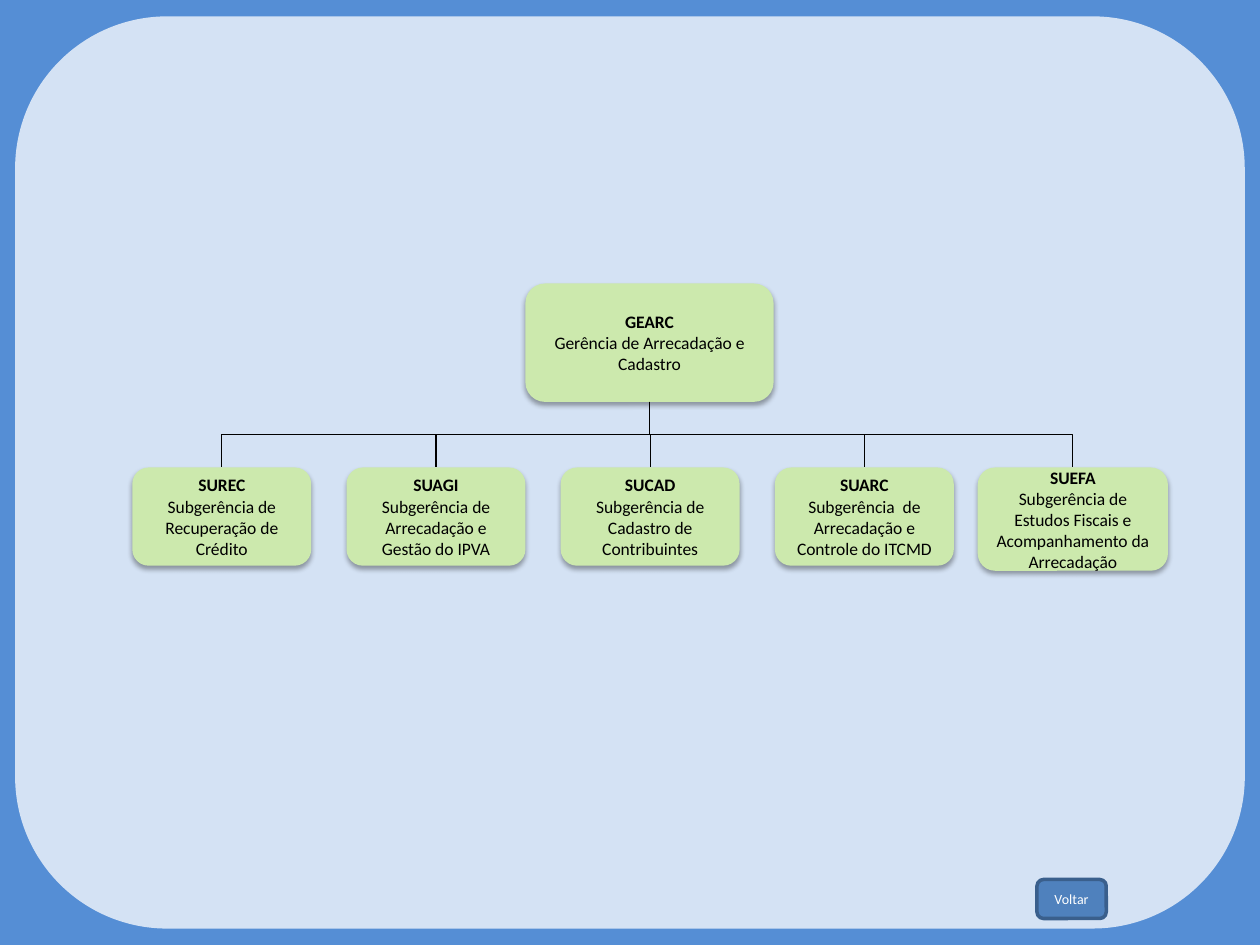
from dataclasses import dataclass

from lxml import etree
from pptx import Presentation
from pptx.dml.color import RGBColor
from pptx.enum.shapes import MSO_CONNECTOR, MSO_SHAPE
from pptx.enum.text import PP_ALIGN
from pptx.oxml.ns import qn
from pptx.shapes.autoshape import Shape
from pptx.slide import Slide
from pptx.util import Inches, Pt

ROUNDED = MSO_SHAPE.ROUNDED_RECTANGLE
ELBOW = MSO_CONNECTOR.ELBOW
CENTER = PP_ALIGN.CENTER

FRAME_BLUE = RGBColor(0x55, 0x8E, 0xD5)
PANEL_BLUE = RGBColor(0xD4, 0xE2, 0xF4)
UNIT_GREEN = RGBColor(0xCC, 0xE9, 0xAD)
BUTTON_BLUE = RGBColor(0x4F, 0x81, 0xBD)
BUTTON_EDGE = RGBColor(0x3A, 0x5F, 0x8C)
BLACK = RGBColor(0, 0, 0)
WHITE = RGBColor(0xFF, 0xFF, 0xFF)

FONT = "Calibri"
BOTTOM_SITE, TOP_SITE = 2, 0
FIRST_LEFT, PITCH, ROW_TOP = 1.05, 1.7, 3.71


@dataclass(frozen=True)
class Unit:
    acronym: str
    description: str
    left: float
    top: float = ROW_TOP
    width: float = 1.42
    height: float = 0.78


MANAGEMENT = Unit("GEARC", "Gerência de Arrecadação e Cadastro", 4.17, 2.25, 1.97, 0.94)
REGULAR_TEAMS = [
    ("SUREC", "Subgerência de Recuperação de Crédito"),
    ("SUAGI", "Subgerência de Arrecadação e Gestão do IPVA"),
    ("SUCAD", "Subgerência de Cadastro de Contribuintes"),
    ("SUARC", "Subgerência  de Arrecadação e Controle do ITCMD"),
]
TEAMS = [
    Unit(acronym, description, FIRST_LEFT + i * PITCH)
    for i, (acronym, description) in enumerate(REGULAR_TEAMS)
] + [
    Unit("SUEFA", "Subgerência de Estudos Fiscais e Acompanhamento da Arrecadação",
         7.76, width=1.51, height=0.82),
]


def add_rounded_box(slide: Slide, left: float, top: float, width: float,
                    height: float, fill: RGBColor) -> Shape:
    box = slide.shapes.add_shape(
        ROUNDED, Inches(left), Inches(top), Inches(width), Inches(height))
    box.fill.solid()
    box.fill.fore_color.rgb = fill
    box.line.fill.background()
    box.shadow.inherit = False
    return box


def write_lines(box: Shape, lines: list[tuple[str, bool]], size: float,
                color: RGBColor) -> None:
    """Fill the box with centred (text, bold) paragraphs."""
    frame = box.text_frame
    frame.word_wrap = True
    frame.text = "\n".join(text for text, _ in lines)
    for paragraph, (_, bold) in zip(frame.paragraphs, lines):
        paragraph.alignment = CENTER
        paragraph.font.name = FONT
        paragraph.font.size = Pt(size)
        paragraph.font.bold = bold
        paragraph.font.color.rgb = color


def add_soft_shadow(box: Shape) -> None:
    effects = box._element.spPr.find(qn("a:effectLst"))
    shadow = etree.SubElement(
        effects, qn("a:outerShdw"), blurRad=str(Pt(3.1)), dist=str(Pt(1.8)),
        dir="5400000", rotWithShape="0")
    color = etree.SubElement(shadow, qn("a:srgbClr"), val=str(BLACK))
    etree.SubElement(color, qn("a:alpha"), val="35000")


def add_unit(slide: Slide, unit: Unit) -> Shape:
    box = add_rounded_box(slide, unit.left, unit.top, unit.width, unit.height, UNIT_GREEN)
    add_soft_shadow(box)
    write_lines(box, [(unit.acronym, True), (unit.description, False)], 10, BLACK)
    return box


def add_branch(slide: Slide, parent: Shape, child: Shape) -> None:
    """Join parent to child with an elbow that leaves and arrives vertically."""
    start_x = parent.left + parent.width // 2
    start_y = parent.top + parent.height
    end_x = child.left + child.width // 2
    drop, span = child.top - start_y, abs(end_x - start_x)

    branch = slide.shapes.add_connector(ELBOW, start_x, start_y, end_x, child.top)
    branch.begin_connect(parent, BOTTOM_SITE)
    branch.end_connect(child, TOP_SITE)
    branch.line.color.rgb = BLACK
    branch.line.width = Pt(0.75)

    # A vertical elbow is a horizontal one turned by a quarter about its centre.
    branch.left = (start_x + end_x - drop) // 2
    branch.top = (start_y + child.top - span) // 2
    branch.width, branch.height = drop, span
    properties = branch._element.spPr
    goes_right = end_x > start_x
    properties.xfrm.set("rot", "16200000" if goes_right else "5400000")
    properties.xfrm.set("flipH", "1" if goes_right else "0")
    properties.xfrm.set("flipV", "0")
    etree.SubElement(properties, qn("a:effectLst"))


def add_back_button(slide: Slide) -> None:
    button = add_rounded_box(slide, 8.23, 6.98, 0.55, 0.31, BUTTON_BLUE)
    button.line.color.rgb = BUTTON_EDGE
    button.line.width = Pt(2)
    write_lines(button, [("Voltar", False)], 8, WHITE)


def main() -> None:
    presentation = Presentation()
    presentation.slide_width = Inches(10)
    presentation.slide_height = Inches(7.5)
    slide = presentation.slides.add_slide(presentation.slide_layouts[6])
    slide.background.fill.solid()
    slide.background.fill.fore_color.rgb = FRAME_BLUE

    add_rounded_box(slide, 0.12, 0.13, 9.76, 7.24, PANEL_BLUE)
    management = add_unit(slide, MANAGEMENT)
    for team in TEAMS:
        add_branch(slide, management, add_unit(slide, team))
    add_back_button(slide)
    presentation.save("out.pptx")


if __name__ == "__main__":
    main()
